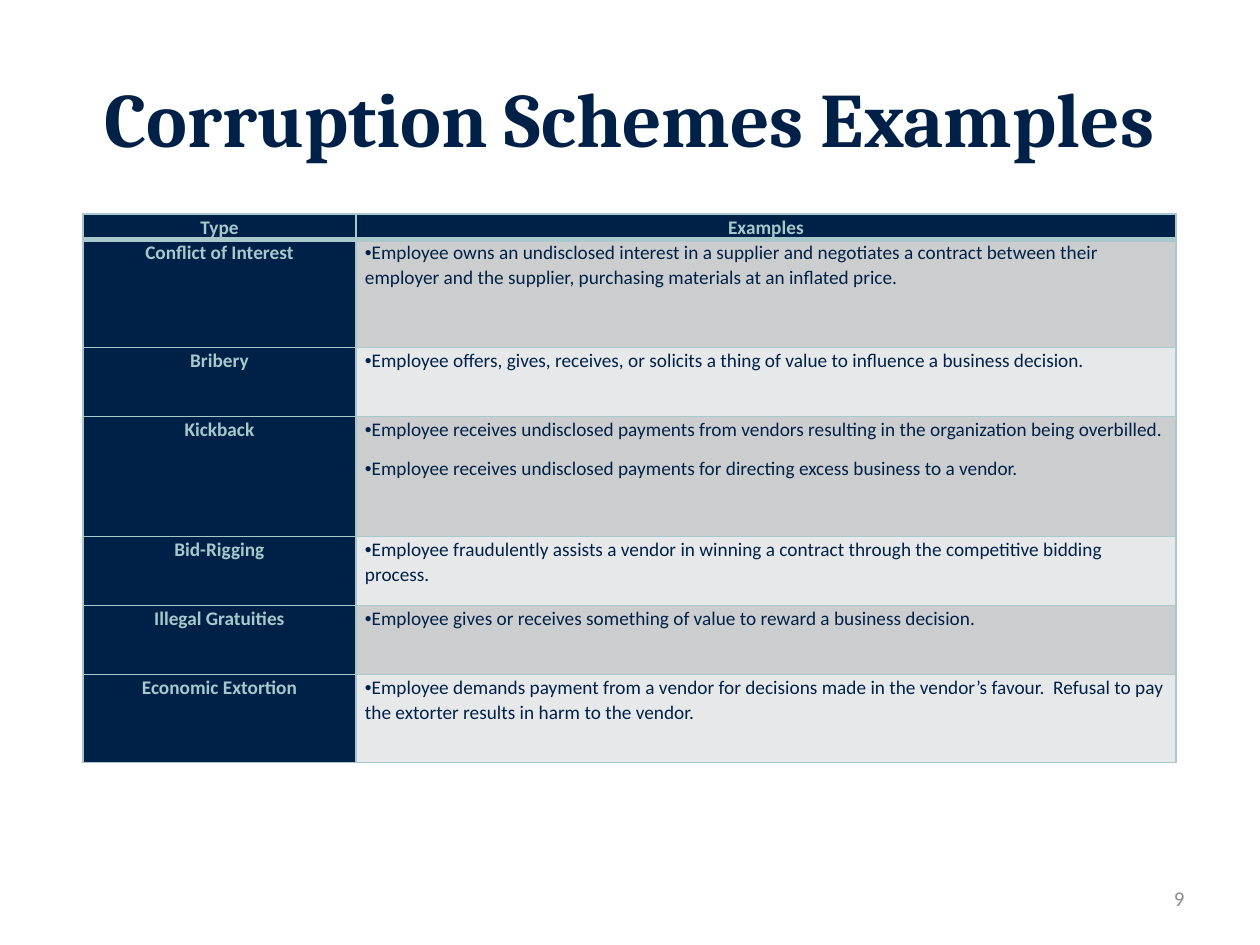
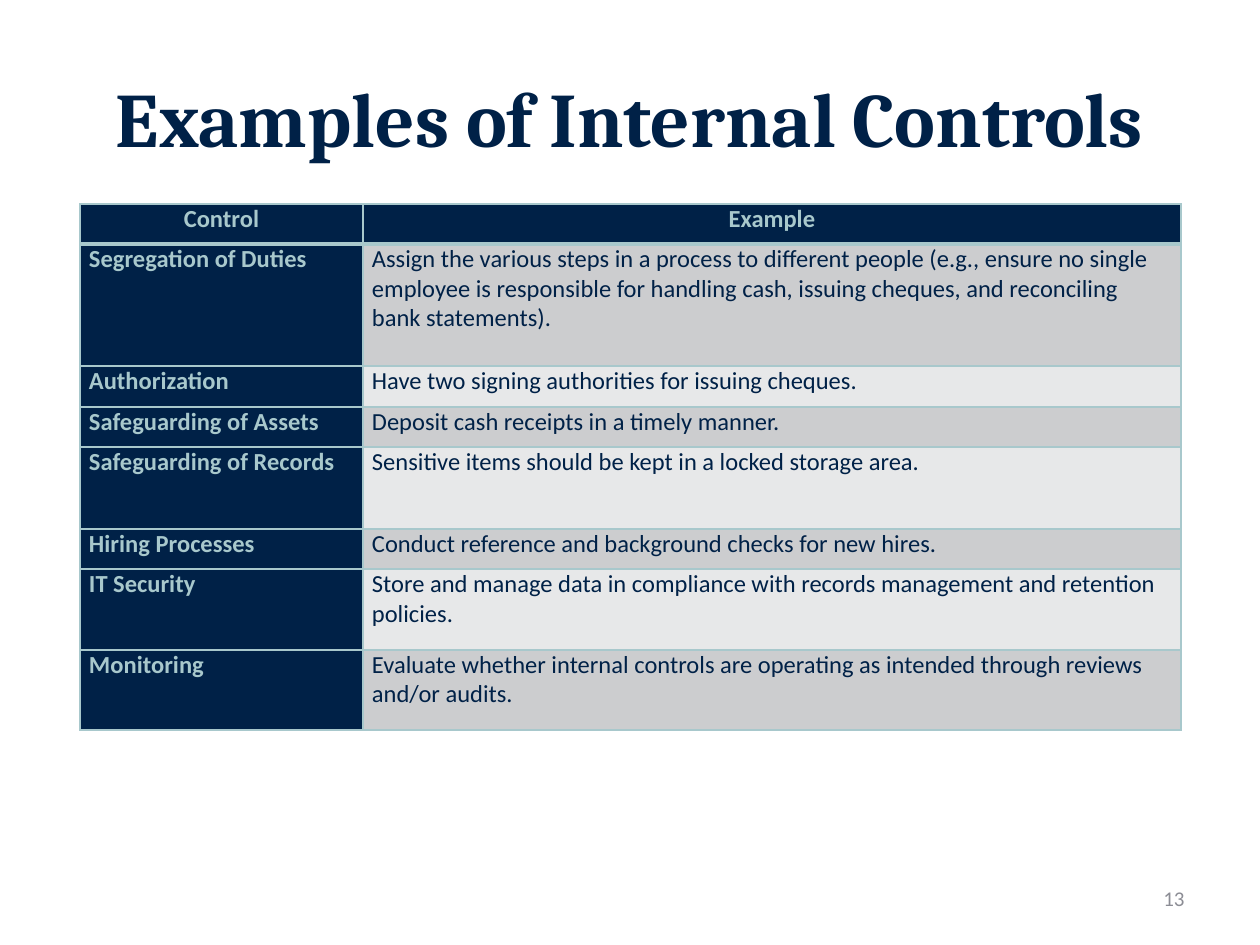
"""Build two slides that present fraud schemes and internal controls as tables."""

from dataclasses import dataclass

from lxml import etree
from pptx import Presentation
from pptx.dml.color import RGBColor
from pptx.enum.text import MSO_ANCHOR, MSO_AUTO_SIZE, PP_ALIGN
from pptx.oxml.ns import qn
from pptx.presentation import Presentation as Deck
from pptx.slide import Slide
from pptx.table import _Cell as Cell
from pptx.text.text import _Paragraph as Paragraph
from pptx.util import Emu, Pt

LEFT, CENTER, RIGHT = PP_ALIGN.LEFT, PP_ALIGN.CENTER, PP_ALIGN.RIGHT
MIDDLE = MSO_ANCHOR.MIDDLE
NO_AUTOFIT = MSO_AUTO_SIZE.NONE
EMU_PER_PX = 914400 / 126
SLIDE_WIDTH, SLIDE_HEIGHT = 1260, 945
TITLE_ONLY_LAYOUT = 5
CELL_INSET = 9
BULLET_INDENT = -24


@dataclass(frozen=True)
class Theme:
    """Colours, fonts, type sizes and rule widths shared by the slides."""

    navy: str = "002147"
    pale_teal: str = "A8C8CC"
    bands: tuple[str, str] = ("CCCDCF", "E7E8E9")
    number_gray: str = "8C8D95"
    title_font: str = "Cambria"
    body_font: str = "Calibri"
    title_size: int = 44
    number_size: int = 12
    compact_size: int = 11
    regular_size: int = 14
    thin_rule: int = 1
    header_rule: int = 3


THEME = Theme()


@dataclass(frozen=True)
class Box:
    """A rectangle in pixels."""

    left: int
    top: int
    width: int
    height: int

    def emu(self) -> tuple[Emu, Emu, Emu, Emu]:
        """Return left, top, width and height in EMU."""
        return px(self.left), px(self.top), px(self.width), px(self.height)


@dataclass(frozen=True)
class TextStyle:
    """The look of a run and of its paragraph."""

    size: int
    color: str
    font: str = THEME.body_font
    bold: bool = False
    alignment: PP_ALIGN = LEFT
    bulleted: bool = False
    line_spacing: float | None = None
    space_after: int | None = None


@dataclass(frozen=True)
class Row:
    """A labelled table row with one paragraph per example."""

    height: int
    label: str
    examples: tuple[str, ...]


@dataclass(frozen=True)
class TableSlide:
    """A slide with a title, a table of examples and a number."""

    title: str
    number: int
    left: int
    top: int
    columns: tuple[int, int]
    rows: tuple[Row, ...]
    text_size: int
    label_alignment: PP_ALIGN
    bulleted: bool = False
    line_spacing: float | None = None
    space_after: int | None = None


TITLE_BOX = Box(63, 38, 1134, 158)
NUMBER_BOX = Box(903, 873, 294, 50)
TITLE_STYLE = TextStyle(THEME.title_size, THEME.navy, THEME.title_font, True, CENTER)
NUMBER_STYLE = TextStyle(THEME.number_size, THEME.number_gray, alignment=RIGHT)

SCHEMES = TableSlide(
    title="Corruption Schemes Examples",
    number=9,
    left=83,
    top=214,
    columns=(273, 820),
    rows=(
        Row(25, "Type", ("Examples",)),
        Row(108, "Conflict of Interest", (
            "Employee owns an undisclosed interest in a supplier and negotiates a contract "
            "between their employer and the supplier, purchasing materials at an inflated price.",
        )),
        Row(69, "Bribery", (
            "Employee offers, gives, receives, or solicits a thing of value to influence "
            "a business decision.",
        )),
        Row(120, "Kickback", (
            "Employee receives undisclosed payments from vendors resulting in the organization "
            "being overbilled.",
            "Employee receives undisclosed payments for directing excess business to a vendor.",
        )),
        Row(69, "Bid-Rigging", (
            "Employee fraudulently assists a vendor in winning a contract through the "
            "competitive bidding process.",
        )),
        Row(69, "Illegal Gratuities", (
            "Employee gives or receives something of value to reward a business decision.",
        )),
        Row(88, "Economic Extortion", (
            "Employee demands payment from a vendor for decisions made in the vendor’s favour.  "
            "Refusal to pay the extorter results in harm to the vendor.",
        )),
    ),
    text_size=THEME.compact_size,
    label_alignment=CENTER,
    bulleted=True,
    line_spacing=1.07,
    space_after=8,
)

CONTROLS = TableSlide(
    title="Examples of Internal Controls",
    number=13,
    left=80,
    top=204,
    columns=(283, 818),
    rows=(
        Row(40, "Control", ("Example",)),
        Row(122, "Segregation of Duties", (
            "Assign the various steps in a process to different people (e.g., ensure no single "
            "employee is responsible for handling cash, issuing cheques, and reconciling "
            "bank statements).",
        )),
        Row(41, "Authorization", ("Have two signing authorities for issuing cheques.",)),
        Row(40, "Safeguarding of Assets", ("Deposit cash receipts in a timely manner.",)),
        Row(82, "Safeguarding of Records", (
            "Sensitive items should be kept in a locked storage area.",
        )),
        Row(40, "Hiring Processes", (
            "Conduct reference and background checks for new hires.",
        )),
        Row(81, "IT Security", (
            "Store and manage data in compliance with records management and retention policies.",
        )),
        Row(80, "Monitoring", (
            "Evaluate whether internal controls are operating as intended through reviews "
            "and/or audits.",
        )),
    ),
    text_size=THEME.regular_size,
    label_alignment=LEFT,
)


def px(length: int) -> Emu:
    """Convert pixels to EMU."""
    return Emu(round(length * EMU_PER_PX))


def add_bullet(paragraph: Paragraph) -> None:
    """Give a paragraph a round bullet that hangs from the cell edge."""
    properties = paragraph._p.get_or_add_pPr()
    properties.set("marL", "0")
    properties.set("indent", str(px(BULLET_INDENT)))
    etree.SubElement(properties, qn("a:buFont"), typeface="Arial")
    etree.SubElement(properties, qn("a:buChar"), char="•")


def write(paragraph: Paragraph, text: str, style: TextStyle) -> None:
    """Add one styled run to a paragraph."""
    if style.bulleted:
        add_bullet(paragraph)
    paragraph.alignment = style.alignment
    if style.line_spacing is not None:
        paragraph.line_spacing = style.line_spacing
    if style.space_after is not None:
        paragraph.space_after = Pt(style.space_after)
    run = paragraph.add_run()
    run.text = text
    run.font.name = style.font
    run.font.size = Pt(style.size)
    run.font.bold = style.bold
    run.font.color.rgb = RGBColor.from_string(style.color)


def add_borders(cell: Cell, top: int, bottom: int) -> None:
    """Draw the four borders of a cell with the given top and bottom widths."""
    properties = cell._tc.get_or_add_tcPr()
    thin = THEME.thin_rule
    for side, width in (("L", thin), ("R", thin), ("T", top), ("B", bottom)):
        line = etree.SubElement(properties, qn(f"a:ln{side}"), w=str(Pt(width)))
        fill = etree.SubElement(line, qn("a:solidFill"))
        etree.SubElement(fill, qn("a:srgbClr"), val=THEME.pale_teal)


def fill_cell(cell: Cell, texts: tuple[str, ...], style: TextStyle, color: str) -> None:
    """Fill a cell with a colour and one paragraph per text."""
    cell.fill.solid()
    cell.fill.fore_color.rgb = RGBColor.from_string(color)
    cell.margin_left = cell.margin_right = px(CELL_INSET)
    cell.margin_top = cell.margin_bottom = 0
    frame = cell.text_frame
    for index, text in enumerate(texts):
        paragraph = frame.add_paragraph() if index else frame.paragraphs[0]
        write(paragraph, text, style)


def add_title(slide: Slide, text: str) -> None:
    """Place and write the title placeholder."""
    title = slide.shapes.title
    title.left, title.top, title.width, title.height = TITLE_BOX.emu()
    frame = title.text_frame
    frame.auto_size = NO_AUTOFIT
    frame.vertical_anchor = MIDDLE
    write(frame.paragraphs[0], text, TITLE_STYLE)


def add_number(slide: Slide, number: int) -> None:
    """Write the slide number at the lower right."""
    frame = slide.shapes.add_textbox(*NUMBER_BOX.emu()).text_frame
    frame.word_wrap = True
    frame.vertical_anchor = MIDDLE
    write(frame.paragraphs[0], str(number), NUMBER_STYLE)


def add_examples_table(slide: Slide, content: TableSlide) -> None:
    """Add the table with a header row, a label column and banded examples."""
    height = sum(row.height for row in content.rows)
    box = Box(content.left, content.top, sum(content.columns), height)
    table = slide.shapes.add_table(len(content.rows), len(content.columns), *box.emu()).table
    table.horz_banding = False
    for column, width in zip(table.columns, content.columns):
        column.width = px(width)

    spacing = {"line_spacing": content.line_spacing, "space_after": content.space_after}
    size = content.text_size
    header = TextStyle(size, THEME.pale_teal, bold=True, alignment=CENTER, **spacing)
    label = TextStyle(
        size, THEME.pale_teal, bold=True, alignment=content.label_alignment, **spacing
    )
    example = TextStyle(size, THEME.navy, bulleted=content.bulleted, **spacing)
    for index, row in enumerate(content.rows):
        table.rows[index].height = px(row.height)
        is_header = index == 0
        top = THEME.header_rule if index == 1 else THEME.thin_rule
        bottom = THEME.header_rule if is_header else THEME.thin_rule
        label_cell, example_cell = table.cell(index, 0), table.cell(index, 1)
        for cell in (label_cell, example_cell):
            add_borders(cell, top, bottom)
        band = THEME.navy if is_header else THEME.bands[(index - 1) % 2]
        fill_cell(label_cell, (row.label,), header if is_header else label, THEME.navy)
        fill_cell(example_cell, row.examples, header if is_header else example, band)


def add_table_slide(presentation: Deck, content: TableSlide) -> None:
    """Add one complete slide to the presentation."""
    slide = presentation.slides.add_slide(presentation.slide_layouts[TITLE_ONLY_LAYOUT])
    add_title(slide, content.title)
    add_examples_table(slide, content)
    add_number(slide, content.number)


def main() -> None:
    """Build and save the presentation."""
    presentation = Presentation()
    presentation.slide_width = px(SLIDE_WIDTH)
    presentation.slide_height = px(SLIDE_HEIGHT)
    for content in (SCHEMES, CONTROLS):
        add_table_slide(presentation, content)
    presentation.save("out.pptx")


if __name__ == "__main__":
    main()
